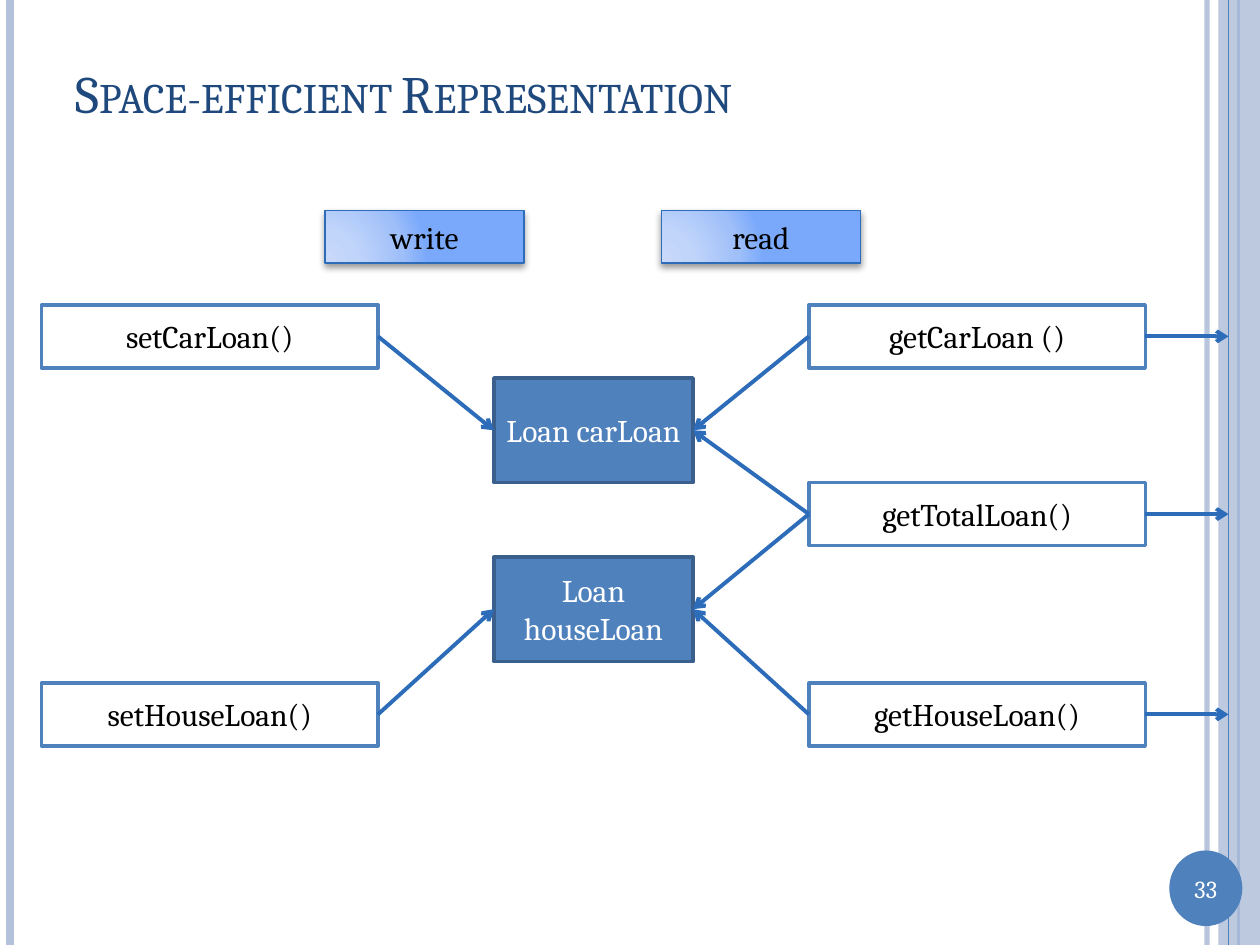
from dataclasses import dataclass

from lxml import etree
from pptx import Presentation
from pptx.dml.color import RGBColor
from pptx.enum import shapes, text
from pptx.oxml import ns
from pptx.util import Inches, Pt

TOP, LEFT, BOTTOM, RIGHT = range(4)


@dataclass(frozen=True)
class Theme:
    font: str = "Cambria"
    title_size: int = 30
    body_size: int = 18
    number_size: int = 14
    navy: str = "1F497D"
    blue: str = "4F81BD"
    outline: str = "3A5F8C"
    arrow: str = "2C6CB9"
    pale: str = "B3C1DB"
    white: str = "FFFFFF"
    black: str = "000000"
    gradient: tuple = ((0, "C7D8FB"), (30, "C1D5FA"), (75, "9FBFF9"), (100, "7AA9FB"))


THEME = Theme()


def rgb(color):
    return RGBColor.from_string(color)


def add_xml(parent, tag, **attributes):
    return etree.SubElement(parent, ns.qn(tag), attributes)


def set_alpha(color_parent, percent):
    color = next(color_parent.iter(ns.qn("a:srgbClr")))
    add_xml(color, "a:alpha", val=str(percent * 1000))


def write_text(shape, words, size, color, align=text.PP_ALIGN.CENTER):
    frame = shape.text_frame
    frame.text = words
    frame.word_wrap = True
    frame.vertical_anchor = text.MSO_ANCHOR.MIDDLE
    paragraph = frame.paragraphs[0]
    paragraph.alignment = align
    font = paragraph.runs[0].font
    font.name, font.size = THEME.font, Pt(size)
    font.color.rgb = rgb(color)
    return font


def add_block(slide, box, fill, line=None, width=2, kind=shapes.MSO_SHAPE.RECTANGLE):
    shape = slide.shapes.add_shape(kind, *map(Inches, box))
    shape.shadow.inherit = False
    shape.fill.solid()
    shape.fill.fore_color.rgb = rgb(fill)
    if line:
        shape.line.color.rgb = rgb(line)
        shape.line.width = Pt(width)
    else:
        shape.line.fill.background()
    return shape


def add_line(slide, start, end, color, width):
    line = slide.shapes.add_connector(
        shapes.MSO_CONNECTOR.STRAIGHT, *map(Inches, (*start, *end)))
    line.line.color.rgb = rgb(color)
    line.line.width = Pt(width)
    add_xml(line._element.spPr, "a:effectLst")
    return line


def add_arrow(slide, source, side, target=None, target_side=None, end=(0, 0)):
    """Run an arrow from a box side to another box side, or to a free end point."""
    arrow = add_line(slide, (0, 0), end, THEME.arrow, 2.25)
    arrow.begin_connect(source, side)
    if target is not None:
        arrow.end_connect(target, target_side)
    add_xml(arrow.line._get_or_add_ln(), "a:tailEnd", type="arrow")


def add_frame(slide, box):
    """Draw the vertical stripes at both edges of the slide."""
    left, top, width, height = box
    right, bottom = left + width, top + height

    def stripe(x, color, line_width):
        return add_line(slide, (x, top), (x, bottom), color, line_width)

    set_alpha(stripe(right - 0.42, THEME.pale, 3)._element.spPr, 93)
    stripe(left + 0.08, THEME.pale, 4.5)
    stripe(right - 0.17, THEME.blue, 1.5)
    band = add_block(slide, (right - 0.33, top, 0.33, height), THEME.pale)
    set_alpha(band._element.spPr, 87)
    stripe(right - 0.25, THEME.blue, 0.75)


def add_page_number(slide, box, number):
    left, top, width, height = box
    add_block(slide, box, THEME.blue, kind=shapes.MSO_SHAPE.OVAL)
    label = slide.shapes.add_textbox(
        *map(Inches, (left, top + 0.13, width, height - 0.26)))
    write_text(label, number, THEME.number_size, THEME.white)


def add_title(slide, box, words):
    title = slide.shapes.add_textbox(*map(Inches, box))
    font = write_text(title, words, THEME.title_size, THEME.navy, text.PP_ALIGN.LEFT)
    font._element.set("cap", "small")


def add_heading(slide, box, words):
    """Add a column heading with a radial gradient and a soft shadow."""
    shape = add_block(slide, box, THEME.white, THEME.arrow, 1)
    properties = shape._element.spPr
    gradient = etree.Element(ns.qn("a:gradFill"), rotWithShape="1")
    stops = add_xml(gradient, "a:gsLst")
    for position, color in THEME.gradient:
        stop = add_xml(stops, "a:gs", pos=str(position * 1000))
        add_xml(stop, "a:srgbClr", val=color)
    focus = add_xml(gradient, "a:path", path="circle")
    add_xml(focus, "a:fillToRect", l="5000", t="100000", r="120000", b="10000")
    properties.replace(properties.find(ns.qn("a:solidFill")), gradient)

    shadow = add_xml(properties.find(ns.qn("a:effectLst")), "a:outerShdw",
                     blurRad=str(Pt(4)), dist=str(Pt(2)), dir="5400000", rotWithShape="0")
    add_xml(shadow, "a:srgbClr", val=THEME.black)
    set_alpha(shadow, 40)
    write_text(shape, words, THEME.body_size, THEME.black)


def add_method(slide, box, words):
    shape = add_block(slide, box, THEME.white, THEME.blue)
    write_text(shape, words, THEME.body_size, THEME.black)
    return shape


def add_variable(slide, box, words):
    shape = add_block(slide, box, THEME.blue, THEME.outline)
    write_text(shape, words, THEME.body_size, THEME.white)
    shape.text_frame.margin_left = shape.text_frame.margin_right = Inches(0.05)
    return shape


def add_diagram(slide, box):
    """Show which methods write and read the two stored loans."""
    left, top, width, _ = box
    method_width, method_height = 2.67, 0.5
    reader_left = left + width - method_width
    car_row, total_row, house_row = top + 0.75, top + 2.16, top + 3.75

    for x, words in ((left + 2.25, "write"), (left + 4.92, "read")):
        add_heading(slide, (x, top, 1.58, 0.42), words)

    car, house = (
        add_variable(slide, (left + 3.59, top + offset, 1.58, 0.83), words)
        for offset, words in ((1.33, "Loan carLoan"), (2.75, "Loan houseLoan")))

    for y, words, variable in ((car_row, "setCarLoan()", car),
                               (house_row, "setHouseLoan()", house)):
        setter = add_method(slide, (left, y, method_width, method_height), words)
        add_arrow(slide, setter, RIGHT, variable, LEFT)

    for y, words, variables in ((car_row, "getCarLoan ()", [car]),
                                (total_row, "getTotalLoan()", [car, house]),
                                (house_row, "getHouseLoan()", [house])):
        getter = add_method(slide, (reader_left, y, method_width, method_height), words)
        for variable in variables:
            add_arrow(slide, getter, LEFT, variable, RIGHT)
        add_arrow(slide, getter, RIGHT, end=(left + width + 0.66, y + method_height / 2))


def main():
    presentation = Presentation()
    presentation.slide_width, presentation.slide_height = Inches(10), Inches(7.5)
    slide = presentation.slides.add_slide(presentation.slide_layouts[6])
    add_frame(slide, (0, 0, 10, 7.5))
    add_page_number(slide, (9.28, 6.75, 0.58, 0.6), "33")
    add_title(slide, (0.5, 0.3, 8.67, 0.87), "Space-efficient Representation")
    add_diagram(slide, (0.33, 1.67, 8.76, 4.25))
    presentation.save("out.pptx")


if __name__ == "__main__":
    main()
